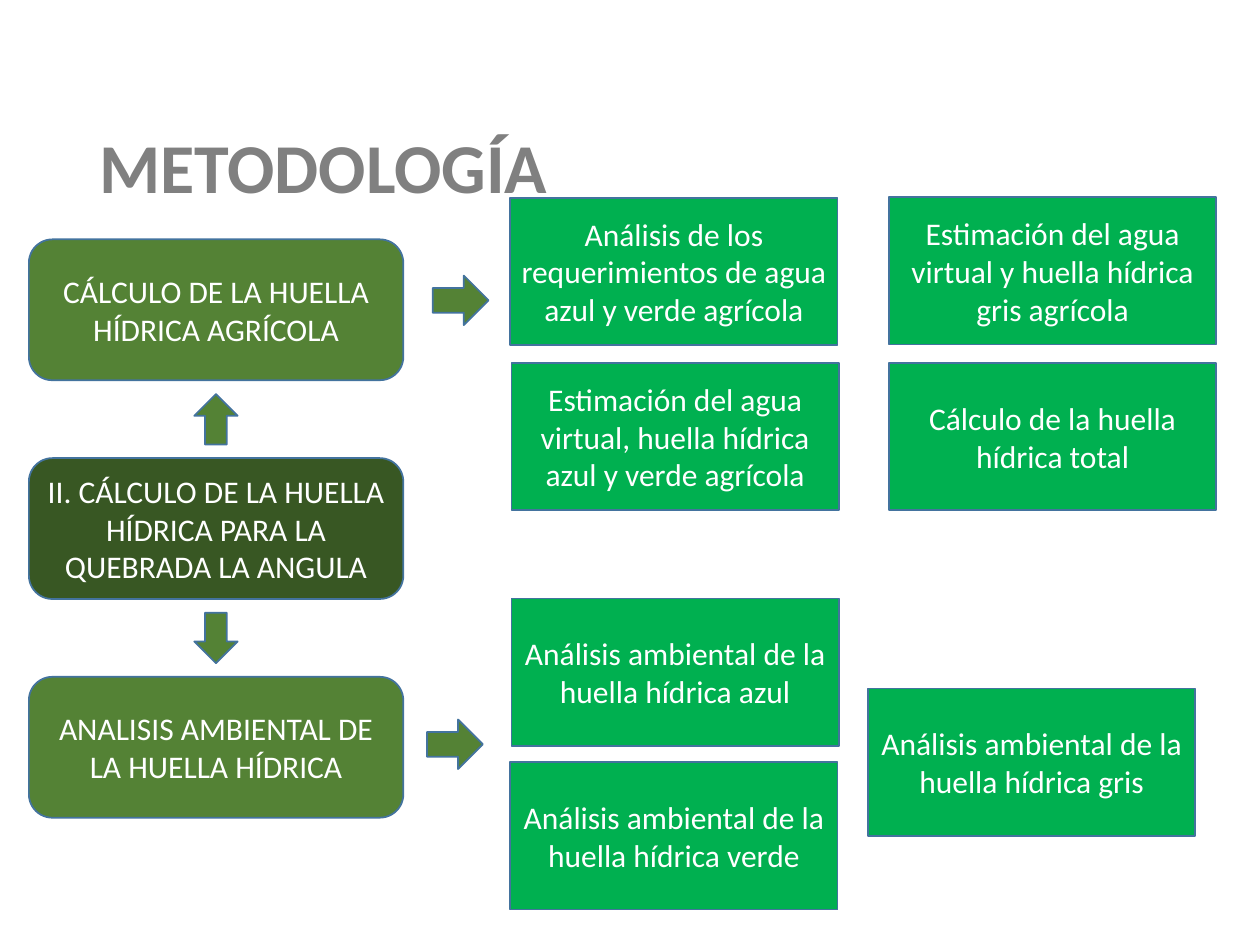
"""Build the METODOLOGÍA slide: three stages, their arrows and their tasks."""
from pptx import Presentation
from pptx.dml.color import RGBColor
from pptx.enum.shapes import MSO_SHAPE
from pptx.enum.text import MSO_ANCHOR, PP_ALIGN
from pptx.util import Pt

DARK, OLIVE, GREEN, BLUE = "385723", "548235", "00B050", "43739E"
WHITE, GRAY = "FFFFFF", "808080"


def rgb(value):
    return RGBColor.from_string(value)


class Deck:
    font = "Calibri"

    def __init__(self, width, height):
        self.prs = Presentation()
        self.prs.slide_width, self.prs.slide_height = Pt(width), Pt(height)
        self.slide = self.prs.slides.add_slide(self.prs.slide_layouts[5])

    def set_text(self, tf, text, size, color, align, bold=False):
        tf.text = text
        tf.word_wrap = True
        tf.vertical_anchor = MSO_ANCHOR.MIDDLE
        p = tf.paragraphs[0]
        p.alignment = align
        font = p.runs[0].font
        font.name, font.size, font.bold = self.font, Pt(size), bold
        font.color.rgb = rgb(color)
        return p

    def title(self, text, x, y, w, h):
        sp = self.slide.shapes.title
        sp.left, sp.top, sp.width, sp.height = Pt(x), Pt(y), Pt(w), Pt(h)
        p = self.set_text(sp.text_frame, text, 40, GRAY, PP_ALIGN.LEFT, True)
        p.line_spacing = 0.9

    def shape(self, kind, x, y, w, h, fill):
        sp = self.slide.shapes.add_shape(kind, Pt(x), Pt(y), Pt(w), Pt(h))
        sp.shadow.inherit = False
        sp.fill.solid()
        sp.fill.fore_color.rgb = rgb(fill)
        sp.line.color.rgb = rgb(BLUE)
        sp.line.width = Pt(1)
        return sp

    def box(self, kind, text, x, y, w, h, fill):
        tf = self.shape(kind, x, y, w, h, fill).text_frame
        tf.margin_left = tf.margin_right = Pt(5.4)
        tf.margin_top = tf.margin_bottom = Pt(2.7)
        self.set_text(tf, text, 18, WHITE, PP_ALIGN.CENTER)


def main():
    deck = Deck(720, 540)
    deck.title("METODOLOGÍA", 49.7, 56.9, 620.6, 81.4)

    stages = [
        ("CÁLCULO DE LA HUELLA HÍDRICA AGRÍCOLA", OLIVE),
        ("II. CÁLCULO DE LA HUELLA HÍDRICA PARA LA QUEBRADA LA ANGULA", DARK),
        ("ANALISIS AMBIENTAL DE LA HUELLA HÍDRICA", OLIVE),
    ]
    for i, (text, fill) in enumerate(stages):
        deck.box(MSO_SHAPE.ROUNDED_RECTANGLE, text, 16.5, 136.8 + 125 * i, 214, 80.5, fill)

    tasks = [
        ("Análisis de los requerimientos de agua azul y verde agrícola", 291.6, 113),
        ("Estimación del agua virtual, huella hídrica azul y verde agrícola", 292.3, 207.4),
        ("Estimación del agua virtual y huella hídrica gris agrícola", 508, 112.7),
        ("Cálculo de la huella hídrica total", 508, 207.4),
        ("Análisis ambiental de la huella hídrica azul", 292.3, 342),
        ("Análisis ambiental de la huella hídrica verde", 291.6, 435.6),
        ("Análisis ambiental de la huella hídrica gris", 496, 393.5),
    ]
    for text, x, y in tasks:
        deck.box(MSO_SHAPE.RECTANGLE, text, x, y, 187, 84.2, GREEN)

    for x, y in [(247.3, 157.5), (244, 411.2)]:
        deck.shape(MSO_SHAPE.RIGHT_ARROW, x, y, 31.9, 28.3, OLIVE)
    for kind, y in [(MSO_SHAPE.UP_ARROW, 225.2), (MSO_SHAPE.DOWN_ARROW, 350.2)]:
        deck.shape(kind, 111, y, 24.8, 28.8, OLIVE)

    deck.prs.save("out.pptx")


if __name__ == "__main__":
    main()
